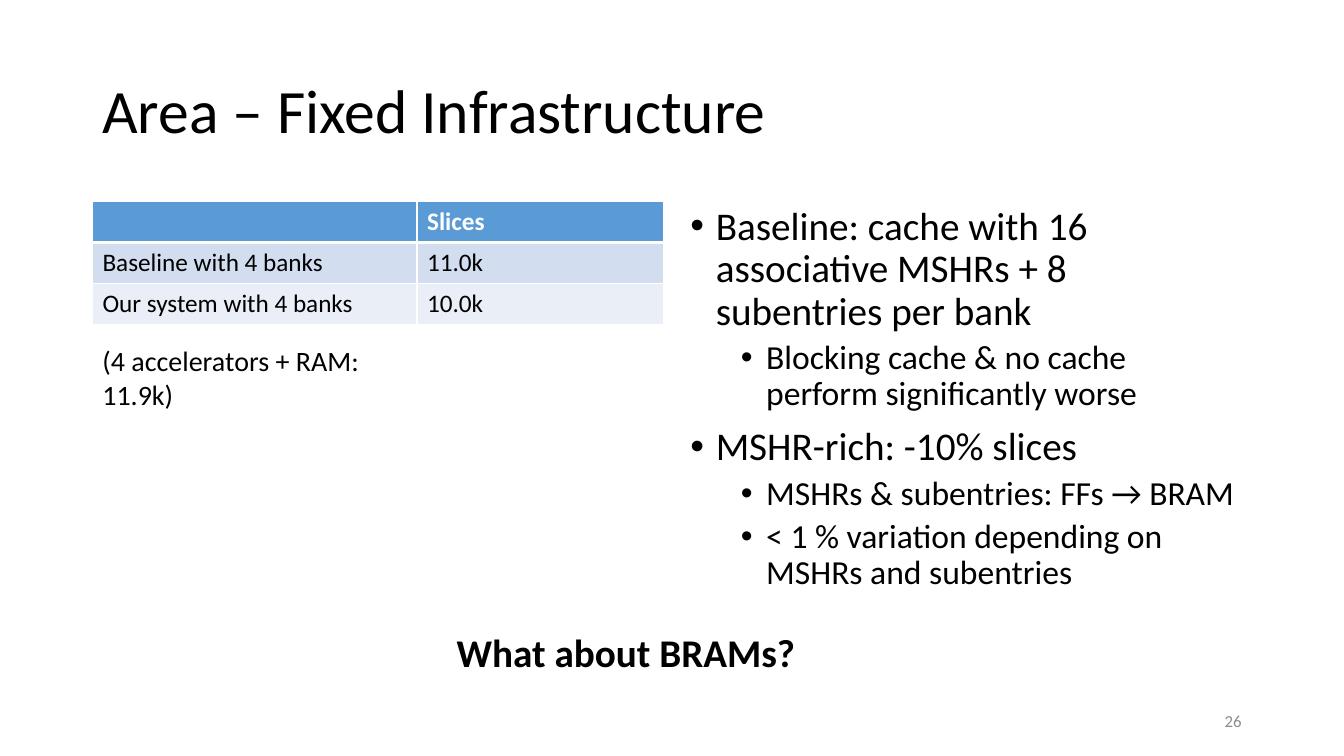
from lxml.etree import SubElement
from pptx import Presentation
from pptx.dml.color import RGBColor
from pptx.enum.text import MSO_ANCHOR as Anchor, PP_ALIGN as Align
from pptx.oxml.ns import qn
from pptx.util import Cm, Pt

FONT = "Calibri"
COLORS = {
    "text": "000000",
    "number": "8C8C8C",
    "white": "FFFFFF",
    "header": "5B9BD5",
    "odd_row": "D2DEEF",
    "even_row": "EAEFF7",
}
LEFT = 2.33
CONTENT_TOP = 5.08
COLUMN_WIDTH = 14.4
AREA_ROWS = [
    ("", "Slices"),
    ("Baseline with 4 banks", "11.0k"),
    ("Our system with 4 banks", "10.0k"),
]
FINDINGS = [
    (0, "Baseline: cache with 16 associative MSHRs + 8 subentries per bank"),
    (1, "Blocking cache & no cache perform significantly worse"),
    (0, "MSHR-rich: -10% slices"),
    (1, "MSHRs & subentries: FFs → BRAM"),
    (1, "< 1 % variation depending on MSHRs and subentries"),
]


def rgb(color):
    return RGBColor.from_string(COLORS[color])


def style(paragraph, size, color="text", bold=False):
    font = paragraph.font
    font.name = FONT
    font.size = Pt(size)
    font.bold = bold
    font.color.rgb = rgb(color)


def add_frame(slide, left, top, width, height, anchor=Anchor.TOP, wrap=True):
    box = slide.shapes.add_textbox(Cm(left), Cm(top), Cm(width), Cm(height))
    frame = box.text_frame
    frame.word_wrap = wrap
    frame.vertical_anchor = anchor
    return frame


def add_line(slide, text, place, size, color="text", bold=False,
             align=Align.LEFT, anchor=Anchor.TOP, wrap=True):
    frame = add_frame(slide, *place, anchor=anchor, wrap=wrap)
    line = frame.paragraphs[0]
    line.text = text
    line.alignment = align
    style(line, size, color, bold)
    return line


def add_bullets(slide, items, place):
    frame = add_frame(slide, *place)
    for index, (level, text) in enumerate(items):
        bullet = frame.paragraphs[0] if index == 0 else frame.add_paragraph()
        bullet.text = text
        bullet.level = level
        bullet.line_spacing = 0.9
        bullet.space_before = Pt(5 if level else 10)
        style(bullet, 24 if level else 28)
        properties = bullet._p.get_or_add_pPr()
        properties.set("marL", str(Cm(0.64 + 1.27 * level)))
        properties.set("indent", str(Cm(-0.64)))
        mark_font = SubElement(properties, qn("a:buFont"), typeface="Arial")
        mark_font.addnext(properties.makeelement(qn("a:buChar"), char="•"))
        properties.append(properties.find(qn("a:defRPr")))


def set_borders(cell, bottom_width):
    properties = cell._tc.get_or_add_tcPr()
    widths = {"lnL": 1, "lnR": 1, "lnT": 1, "lnB": bottom_width}
    for position, (side, width) in enumerate(widths.items()):
        border = properties.makeelement(qn(f"a:{side}"), w=str(Pt(width)))
        fill = SubElement(border, qn("a:solidFill"))
        SubElement(fill, qn("a:srgbClr"), val=COLORS["white"])
        properties.insert(position, border)


def add_area_table(slide, rows, left, top, column_widths, row_height):
    table = slide.shapes.add_table(
        len(rows), len(column_widths), Cm(left), Cm(top),
        Cm(sum(column_widths)), Cm(row_height * len(rows))).table
    for column, width in zip(table.columns, column_widths):
        column.width = Cm(width)
    for row_index, values in enumerate(rows):
        is_header = row_index == 0
        stripe = "odd_row" if row_index % 2 else "even_row"
        for column_index, value in enumerate(values):
            cell = table.cell(row_index, column_index)
            cell.text = value
            cell.fill.solid()
            cell.fill.fore_color.rgb = rgb("header" if is_header else stripe)
            style(cell.text_frame.paragraphs[0], 18,
                  "white" if is_header else "text", is_header)
            set_borders(cell, 3 if is_header else 1)


def main():
    deck = Presentation()
    deck.slide_width = Cm(33.87)
    deck.slide_height = Cm(19.05)
    slide = deck.slides.add_slide(deck.slide_layouts[6])

    title = add_line(slide, "Area – Fixed Infrastructure",
                     (LEFT, 1.01, 29.21, 3.68), 44, anchor=Anchor.MIDDLE)
    title.line_spacing = 0.9
    add_area_table(slide, AREA_ROWS, LEFT, CONTENT_TOP, (8.18, 6.22), 1.03)
    add_bullets(slide, FINDINGS, (17.15, CONTENT_TOP, COLUMN_WIDTH, 12.09))
    add_line(slide, "26", (23.92, 17.66, 7.62, 1.01), 12, "number",
             align=Align.RIGHT, anchor=Anchor.MIDDLE)
    add_line(slide, "What about BRAMs?", (11.26, 15.7, 9.14, 1.45), 28,
             bold=True, wrap=False)
    add_line(slide, "(4 accelerators + RAM: 11.9k)", (LEFT, 8.54, 8.84, 1.11),
             20, wrap=False)

    deck.save("out.pptx")


if __name__ == "__main__":
    main()
